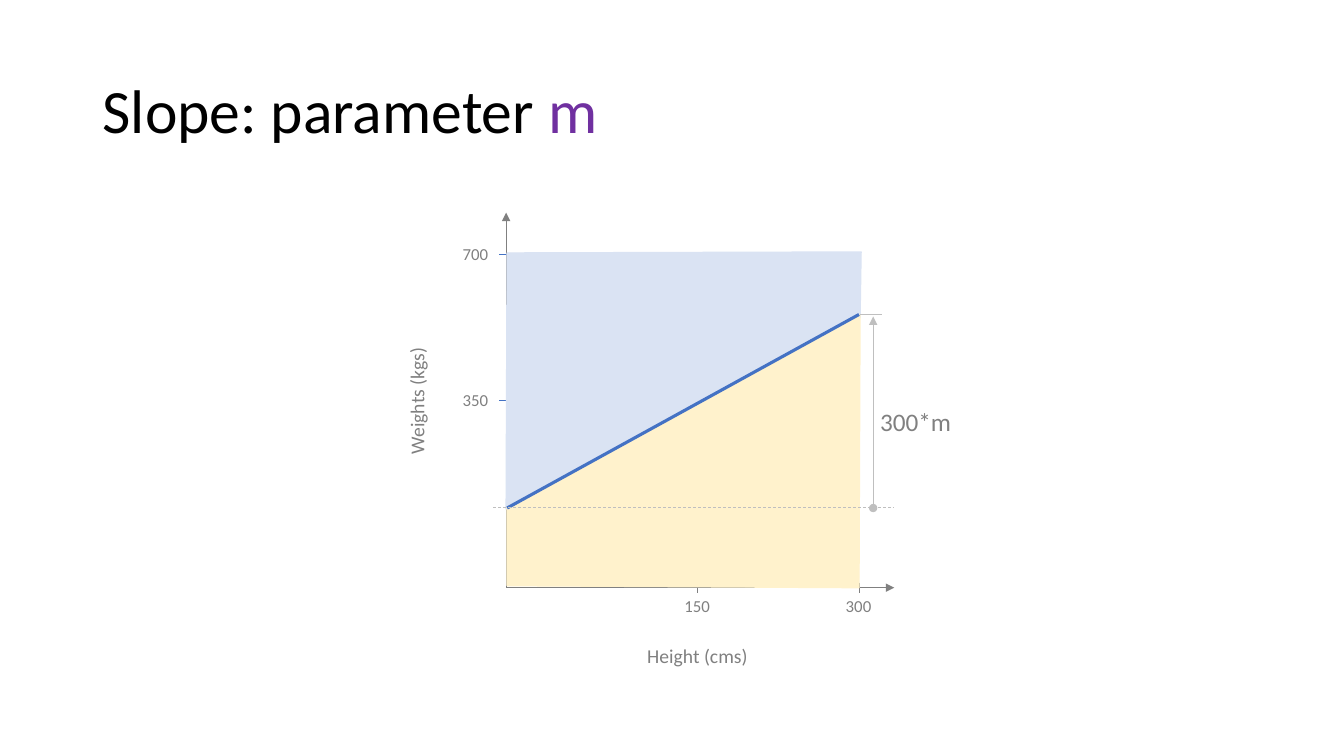
from dataclasses import dataclass

from lxml import etree
from pptx import Presentation
from pptx.dml.color import RGBColor
from pptx.enum.dml import MSO_LINE
from pptx.enum.shapes import MSO_CONNECTOR
from pptx.enum.text import MSO_ANCHOR, MSO_AUTO_SIZE
from pptx.oxml.ns import qn
from pptx.slide import Slide
from pptx.util import Inches, Pt

STRAIGHT = MSO_CONNECTOR.STRAIGHT
DASH = MSO_LINE.DASH
MIDDLE, TOP = MSO_ANCHOR.MIDDLE, MSO_ANCHOR.TOP
FIT_SHAPE, NO_FIT = MSO_AUTO_SIZE.SHAPE_TO_FIT_TEXT, MSO_AUTO_SIZE.NONE

Point = tuple[float, float]


@dataclass(frozen=True)
class Theme:
    font: str = "Calibri"
    title: str = "000000"
    parameter: str = "7030A0"
    axis: str = "808080"
    guide: str = "BFBFBF"
    model: str = "4472C4"
    above: str = "DAE3F3"
    below: str = "FFF2CC"
    title_size: int = 44
    slope_size: int = 18
    caption_size: int = 14
    tick_size: int = 12
    thin: float = 0.5
    outline: float = 1
    bold: float = 2.25


@dataclass(frozen=True)
class Stroke:
    start: Point
    end: Point
    color: str
    width: float = 0.5
    dashed: bool = False
    head: str = ""
    tail: str = ""


@dataclass(frozen=True)
class Region:
    corners: tuple[Point, ...]
    color: str


@dataclass(frozen=True)
class Tick:
    label: str
    position: float


THEME = Theme()
ORIGIN: Point = (5.02, 5.83)
INTERCEPT: Point = (5.03, 5.04)
LINE_END: Point = (8.52, 3.12)
HEIGHT_TICKS = [Tick(str(150 * n), 5.32 + 1.6 * n) for n in (2, 1)]
WEIGHT_TICKS = [Tick(str(350 * n), 5.42 - 1.45 * n) for n in (2, 1)]
AXES = [
    Stroke(ORIGIN, (5.02, 2.11), THEME.axis, tail="triangle"),
    Stroke(ORIGIN, (8.87, 5.83), THEME.axis, tail="triangle"),
]
REGIONS = [
    Region(((8.53, 3.15), (8.54, 2.5), (5.03, 2.51), (5.02, 5.05)), THEME.above),
    Region((INTERCEPT, (5.03, 5.81), (8.52, 5.83), (8.53, 3.12)), THEME.below),
]
MODEL_AND_GUIDES = [
    Stroke(INTERCEPT, LINE_END, THEME.model, THEME.bold),
    Stroke((4.89, 5.03), (8.87, 5.03), THEME.guide, dashed=True),
    Stroke((8.66, 3.14), (8.66, 5.04), THEME.guide, head="triangle", tail="oval"),
    Stroke((8.53, 3.12), (8.75, 3.12), THEME.guide),
]


def add_text(slide: Slide, text: str, left: float, top: float, width: float, height: float, *,
             size: int = THEME.tick_size, color: str = THEME.axis, rotation: float = 0,
             wrap: bool = False, anchor: MSO_ANCHOR = TOP, spacing: float = 1,
             accent: str = "") -> None:
    """Place one line of text, optionally ending in an accented run."""
    box = slide.shapes.add_textbox(Inches(left), Inches(top), Inches(width), Inches(height))
    box.rotation = rotation
    frame = box.text_frame
    frame.word_wrap = wrap
    frame.auto_size = NO_FIT if wrap else FIT_SHAPE
    frame.vertical_anchor = anchor
    paragraph = frame.paragraphs[0]
    paragraph.line_spacing = spacing
    for content, tint in ((text, color), (accent, THEME.parameter)):
        if content:
            run = paragraph.add_run()
            run.text = content
            run.font.name = THEME.font
            run.font.size = Pt(size)
            run.font.color.rgb = RGBColor.from_string(tint)


def add_stroke(slide: Slide, stroke: Stroke) -> None:
    """Draw a straight line with optional dashes and end marks."""
    points = [Inches(value) for value in stroke.start + stroke.end]
    connector = slide.shapes.add_connector(STRAIGHT, *points)
    connector.line.color.rgb = RGBColor.from_string(stroke.color)
    connector.line.width = Pt(stroke.width)
    if stroke.dashed:
        connector.line.dash_style = DASH
    properties = connector.line._get_or_add_ln()
    for tag, mark in (("a:headEnd", stroke.head), ("a:tailEnd", stroke.tail)):
        if mark:
            etree.SubElement(properties, qn(tag), type=mark)
    etree.SubElement(connector._element.spPr, qn("a:effectLst"))


def add_region(slide: Slide, region: Region) -> None:
    """Fill a closed area of the plot."""
    first, *rest = [(Inches(x), Inches(y)) for x, y in region.corners]
    builder = slide.shapes.build_freeform(*first)
    builder.add_line_segments(rest, close=True)
    area = builder.convert_to_shape()
    area.shadow.inherit = False
    color = RGBColor.from_string(region.color)
    area.fill.solid()
    area.fill.fore_color.rgb = color
    area.line.color.rgb = color
    area.line.width = Pt(THEME.outline)


def add_axes(slide: Slide) -> None:
    """Draw both axes with their captions, ticks and tick labels."""
    add_text(slide, "Height (cms)", 6.32, 6.34, 1.21, 0.34, size=THEME.caption_size)
    add_text(slide, "Weights (kgs)", 3.5, 3.8, 1.27, 0.34, size=THEME.caption_size, rotation=270)
    for axis in AXES:
        add_stroke(slide, axis)
    for tick in HEIGHT_TICKS:
        x = tick.position
        add_stroke(slide, Stroke((x, 5.78), (x, 5.88), THEME.axis))
        add_text(slide, tick.label, x - 0.23, 5.86, 0.46, 0.3)
    for tick in WEIGHT_TICKS:
        y = tick.position
        add_stroke(slide, Stroke((5.07, y), (4.95, y), THEME.model))
        add_text(slide, tick.label, 4.49, y - 0.15, 0.46, 0.3)


def main() -> None:
    """Build the slope slide and save it."""
    deck = Presentation()
    deck.slide_width, deck.slide_height = Inches(13.33), Inches(7.5)
    slide = deck.slides.add_slide(deck.slide_layouts[6])
    add_axes(slide)
    for region in REGIONS:
        add_region(slide, region)
    for stroke in MODEL_AND_GUIDES:
        add_stroke(slide, stroke)
    add_text(slide, "300*m", 8.63, 3.98, 0.91, 0.4, size=THEME.slope_size)
    add_text(slide, "Slope: parameter ", 0.92, 0.4, 11.5, 1.45, size=THEME.title_size,
             color=THEME.title, wrap=True, anchor=MIDDLE, spacing=0.9, accent="m")
    deck.save("out.pptx")


if __name__ == "__main__":
    main()
